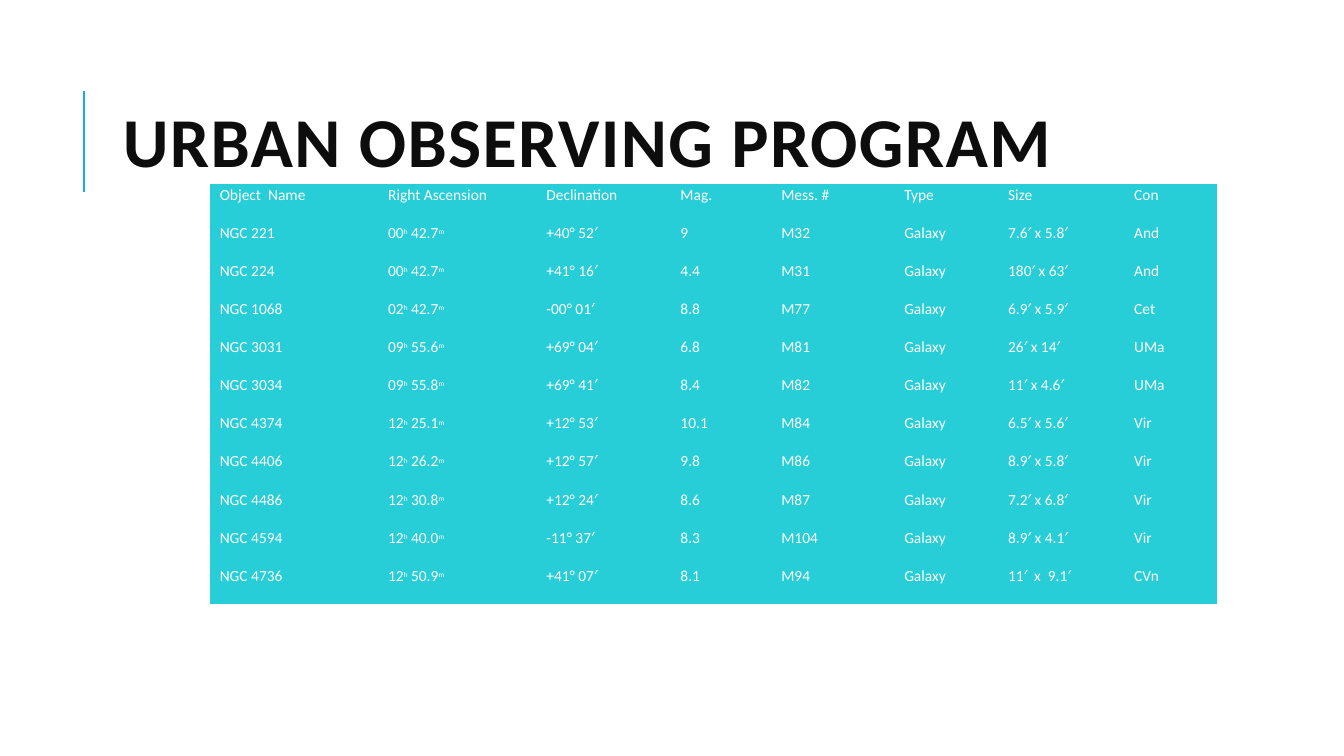
from dataclasses import dataclass

from lxml import etree
from pptx import Presentation
from pptx.dml.color import RGBColor
from pptx.enum import shapes, text
from pptx.oxml.ns import qn
from pptx.util import Inches, Pt

TITLE = "URBAN OBSERVING PROGRAM"
HEADERS = ["Object  Name", "Right Ascension", "Declination", "Mag.",
           "Mess. #", "Type", "Size", "Con"]
KIND = "Galaxy"
# name, (hours, minutes), (degrees, arc minutes), magnitude, Messier number, size, constellation
GALAXIES = [
    ("NGC 221", ("00", "42.7"), ("+40°", "52′"), "9", "M32", "7.6′ x 5.8′", "And"),
    ("NGC 224", ("00", "42.7"), ("+41°", "16′"), "4.4", "M31", "180′ x 63′", "And"),
    ("NGC 1068", ("02", "42.7"), ("-00°", "01′"), "8.8", "M77", "6.9′ x 5.9′", "Cet"),
    ("NGC 3031", ("09", "55.6"), ("+69°", "04′"), "6.8", "M81", "26′ x 14′", "UMa"),
    ("NGC 3034", ("09", "55.8"), ("+69°", "41′"), "8.4", "M82", "11′ x 4.6′", "UMa"),
    ("NGC 4374", ("12", "25.1"), ("+12°", "53′"), "10.1", "M84", "6.5′ x 5.6′", "Vir"),
    ("NGC 4406", ("12", "26.2"), ("+12°", "57′"), "9.8", "M86", "8.9′ x 5.8′", "Vir"),
    ("NGC 4486", ("12", "30.8"), ("+12°", "24′"), "8.6", "M87", "7.2′ x 6.8′", "Vir"),
    ("NGC 4594", ("12", "40.0"), ("-11°", "37′"), "8.3", "M104", "8.9′ x 4.1′", "Vir"),
    ("NGC 4736", ("12", "50.9"), ("+41°", "07′"), "8.1", "M94", "11′  x  9.1′", "CVn"),
]
COLUMN_WIDTHS = [1.67, 1.57, 1.33, 1, 1.22, 1.03, 1.25, 0.92]
TABLE_LEFT, TABLE_TOP, TABLE_HEIGHT = 2.08, 1.83, 4.16
NO_STYLE_NO_GRID = "{2D5ABB26-0587-4C30-8999-92F81FD0307C}"
NBSP = chr(160)


@dataclass(frozen=True)
class Theme:
    font: str = "Calibri"
    ink: str = "0D0D0D"
    accent: str = "1CADE4"
    cell: str = "27CED7"
    cell_text: str = "FFFFFF"
    title_size: int = 50
    cell_size: int = 11
    unit_size: int = 9


THEME = Theme()


def add_text(paragraph, content, size=THEME.cell_size, color=THEME.cell_text,
             bold=False, spacing=0, baseline=0):
    """Append a run; spacing is in points, baseline in percent."""
    run = paragraph.add_run()
    run.text = content
    run.font.name = THEME.font
    run.font.size = Pt(size)
    run.font.bold = bold
    run.font.color.rgb = RGBColor.from_string(color)
    properties = run.font._element
    if spacing:
        properties.set("spc", str(spacing * 100))
    if baseline:
        properties.set("baseline", str(baseline * 1000))


def add_title(slide):
    line = slide.shapes.add_connector(
        shapes.MSO_CONNECTOR.STRAIGHT,
        Inches(0.83), Inches(1.9), Inches(0.83), Inches(0.9))
    line.line.color.rgb = RGBColor.from_string(THEME.accent)
    line.line.width = Pt(1.5)
    etree.SubElement(line._element.spPr, qn("a:effectLst"))

    box = slide.shapes.add_textbox(Inches(1.12), Inches(0.64), Inches(10.63), Inches(1.64))
    frame = box.text_frame
    frame.word_wrap = True
    frame.vertical_anchor = text.MSO_ANCHOR.MIDDLE
    paragraph = frame.paragraphs[0]
    paragraph.line_spacing = 0.8
    add_text(paragraph, TITLE, size=THEME.title_size, color=THEME.ink, bold=True, spacing=1)


def table_rows():
    """Each cell is a list of (text, is_raised_unit) parts."""
    yield [[(header, False)] for header in HEADERS]
    for name, (hours, minutes), declination, magnitude, messier, size, constellation in GALAXIES:
        ascension = [(hours, False), ("h", True), (NBSP + minutes, False), ("m", True)]
        plain = [NBSP.join(declination), magnitude, messier, KIND, size, constellation]
        yield [[(name, False)], ascension] + [[(value, False)] for value in plain]


def fill_cell(cell, parts):
    cell.margin_left, cell.margin_top = Inches(0.1), Inches(0.01)
    cell.margin_right, cell.margin_bottom = Inches(0.01), 0
    cell.fill.solid()
    cell.fill.fore_color.rgb = RGBColor.from_string(THEME.cell)
    for content, raised in parts:
        style = {"size": THEME.unit_size, "baseline": 30} if raised else {}
        add_text(cell.text_frame.paragraphs[0], content, **style)


def add_galaxy_table(slide):
    rows = list(table_rows())
    table = slide.shapes.add_table(
        len(rows), len(HEADERS), Inches(TABLE_LEFT), Inches(TABLE_TOP),
        Inches(sum(COLUMN_WIDTHS)), Inches(TABLE_HEIGHT)).table
    table.first_row = table.horz_banding = False
    table._tbl.tblPr.find(qn("a:tableStyleId")).text = NO_STYLE_NO_GRID
    for column, width in zip(table.columns, COLUMN_WIDTHS):
        column.width = Inches(width)
    for row, values in zip(table.rows, rows):
        row.height = Inches(TABLE_HEIGHT / len(rows))
        for cell, parts in zip(row.cells, values):
            fill_cell(cell, parts)


def main():
    presentation = Presentation()
    presentation.slide_width, presentation.slide_height = Inches(13.33), Inches(7.5)
    slide = presentation.slides.add_slide(presentation.slide_layouts[6])
    add_title(slide)
    add_galaxy_table(slide)
    presentation.save("out.pptx")


if __name__ == "__main__":
    main()
